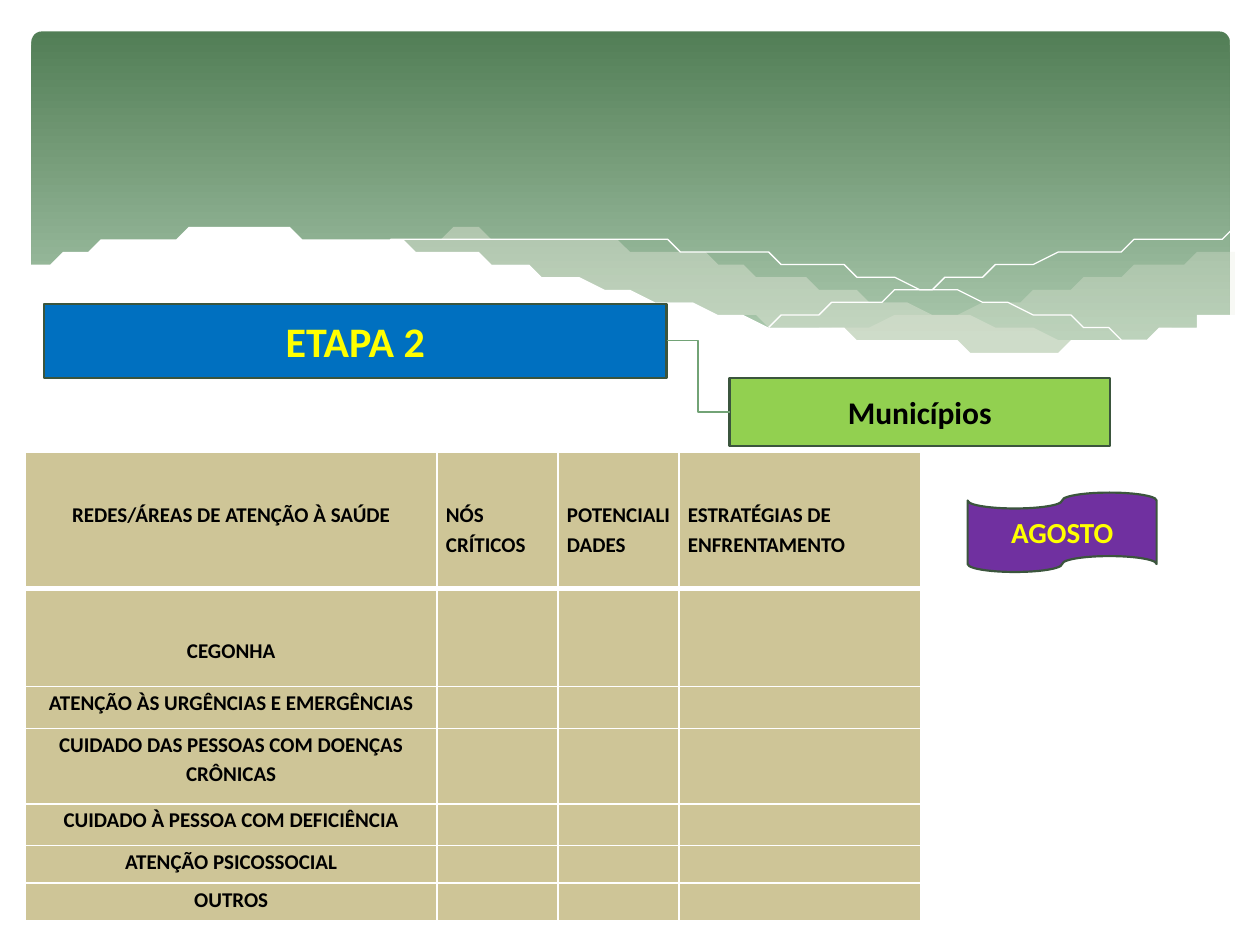
import pptx
import pptx.util
import pptx.dml.color
import pptx.enum.shapes
import pptx.enum.text
import pptx.oxml
import lxml.etree

SHAPE = pptx.enum.shapes.MSO_SHAPE
ALIGN = pptx.enum.text.PP_ALIGN
Pt = pptx.util.Pt
rgb = pptx.dml.color.RGBColor.from_string

prs = pptx.Presentation()
prs.slide_width = pptx.util.Inches(10)
prs.slide_height = pptx.util.Inches(7.5)
s = prs.slides.add_slide(prs.slide_layouts[6])

# Grid of 100 columns by 75 rows of square units
U = prs.slide_width // 100


def smooth(knots, steps=6):
    """Points of a Catmull-Rom curve through the knots."""
    ends = [knots[0]] + knots + [knots[-1]]
    pts = [knots[0]]
    for a, b, c, d in zip(ends, ends[1:], ends[2:], ends[3:]):
        for i in range(1, steps + 1):
            t = i / steps
            pts.append(tuple(
                (2 * q + (r - p) * t + (2 * p - 5 * q + 4 * r - w) * t ** 2
                 + (3 * q - p - 3 * r + w) * t ** 3) / 2
                for p, q, r, w in zip(a, b, c, d)))
    return pts


def style(sp, fill, line=None, width=1.25, text="", size=18, color="000000"):
    """Fill, outline and centred bold text of a shape."""
    sp.shadow.inherit = False
    if fill:
        sp.fill.solid()
        sp.fill.fore_color.rgb = rgb(fill)
    else:
        sp.fill.background()
    if line:
        sp.line.color.rgb = rgb(line)
        sp.line.width = Pt(width)
    else:
        sp.line.fill.background()
    if text:
        tf = sp.text_frame
        tf.text = text
        tf.word_wrap = True
        tf.vertical_anchor = pptx.enum.text.MSO_ANCHOR.MIDDLE
        p = tf.paragraphs[0]
        p.alignment = ALIGN.CENTER
        f = p.runs[0].font
        f.name, f.size, f.bold = "Calibri", Pt(size), True
        f.color.rgb = rgb(color)


# Green banner
sp = s.shapes.add_shape(SHAPE.ROUNDED_RECTANGLE, 2.5 * U, 2.5 * U, 95.1 * U, 27 * U)
sp.adjustments[0] = 0.03
style(sp, "527E56")
sp.fill.gradient()
sp.fill.gradient_angle = 270
for stop, (pos, color) in zip(sp.fill.gradient_stops, [(0, "527E56"), (0.9, "AAC8AD")]):
    stop.position = pos
    stop.color.rgb = rgb(color)

# Waves: upper edge, lower edge, fill, opacity in percent, line
waves = [
    ([(97.6, 20), (92.1, 21), (86.1, 22.3), (77.9, 24.2), (66.1, 26.5)],
     [(66.1, 26.5), (71.9, 27.2), (76.9, 27.7), (81.4, 27.7), (86.3, 27.5),
      (91.3, 26.7), (94.9, 25.7), (97.6, 24.7)], "EAEBDE", 29, None),
    ([(89.3, 27.3), (80.7, 26), (70.6, 24), (62.9, 22.2), (55.5, 20.5),
      (48.9, 19.4), (42, 18.7), (36.1, 18.5), (28.6, 19.1)],
     [(28.6, 19.1), (36.2, 20.3), (44.9, 22.2), (56.6, 24.8), (65, 26.4),
      (72.2, 27.4), (78.5, 27.8), (83.8, 27.8), (89.3, 27.3)], "EAEBDE", 40, None),
    ([(30.9, 19.5), (35.3, 18.9), (41.6, 18.7), (48.9, 19), (55.6, 19.7),
      (63.6, 20.8), (72.7, 22.6), (83.1, 25.1), (90.7, 27.2)], [], None, 100, "FFFFFF"),
    ([(61.3, 25.7), (69.5, 23.5), (77.6, 21.6), (86.6, 19.9), (92.4, 19),
      (97.5, 18.5)], [], None, 100, "FFFFFF"),
    ([(97.7, 24.6), (94, 25.9), (89.9, 26.9), (85, 27.5), (80.9, 27.7),
      (74.4, 27.4), (66.8, 26.5), (57.9, 25), (50.3, 23.3), (41.8, 21.3),
      (34, 19.7), (27.1, 18.8), (21.1, 18.4), (16.1, 18.4), (11.9, 18.7),
      (8.5, 19.3), (5.2, 20.1), (2.3, 21.3)],
     [(2.3, 32.9), (97.7, 32.9)], "FFFFFF", 100, None),
]
for upper, lower, fill, opacity, line in waves:
    pts = smooth(upper) + (smooth(lower) if len(lower) > 2 else lower)
    fb = s.shapes.build_freeform(*pts[0], scale=U)
    fb.add_line_segments(pts[1:], close=bool(lower))
    sp = fb.convert_to_shape()
    style(sp, fill, line, 0)
    if opacity < 100:
        clr = sp.fill._xPr.find(".//" + pptx.oxml.ns.qn("a:srgbClr"))
        lxml.etree.SubElement(clr, pptx.oxml.ns.qn("a:alpha"), val=str(opacity * 1000))

# Month tape
sp = s.shapes.add_shape(SHAPE.WAVE, 76.8 * U, 39.1 * U, 15 * U, 6.3 * U)
sp._element.spPr.prstGeom.set("prst", "flowChartPunchedTape")
av = sp._element.spPr.prstGeom.avLst
for gd in list(av):
    av.remove(gd)
style(sp, "7030A0", "3B553D", text="AGOSTO", size=16.6, color="FFFF00")

# Table of care networks
cols = [32.7, 9.6, 9.6, 19.2]
rows = [10.8, 7.8, 3.3, 6, 3.3, 3, 3]
header = ["REDES/ÁREAS DE ATENÇÃO À SAÚDE", "NÓS CRÍTICOS", "POTENCIALIDADES",
          "ESTRATÉGIAS DE ENFRENTAMENTO"]
networks = ["CEGONHA", "ATENÇÃO ÀS URGÊNCIAS E EMERGÊNCIAS",
            "CUIDADO DAS PESSOAS COM DOENÇAS CRÔNICAS",
            "CUIDADO À PESSOA COM DEFICIÊNCIA", "ATENÇÃO PSICOSSOCIAL", "OUTROS"]
data = [header] + [[n, "", "", ""] for n in networks]
table = s.shapes.add_table(len(rows), len(cols), 2 * U, 35.9 * U,
                           int(sum(cols) * U), int(sum(rows) * U)).table
for col, w in zip(table.columns, cols):
    col.width = int(w * U)
for i, h in enumerate(rows):
    table.rows[i].height = int(h * U)
    for j, text in enumerate(data[i]):
        cell = table.cell(i, j)
        cell.margin_left = cell.margin_right = int(0.7 * U)
        cell.margin_top = int(3.7 * U) if i < 2 and text else 0
        cell.margin_bottom = 0
        # White borders, thicker under the header
        tcPr = cell._tc.get_or_add_tcPr()
        for side in "LRTB":
            thick = (i, side) in [(0, "B"), (1, "T")]
            tcPr.append(pptx.oxml.parse_xml(
                f'<a:ln{side} {pptx.oxml.ns.nsdecls("a")} w="{Pt(3 if thick else 1)}">'
                '<a:solidFill><a:srgbClr val="FFFFFF"/></a:solidFill>'
                f'</a:ln{side}>'))
        cell.fill.solid()
        cell.fill.fore_color.rgb = rgb("CEC597")
        p = cell.text_frame.paragraphs[0]
        if not text:
            lxml.etree.SubElement(p._p, pptx.oxml.ns.qn("a:endParaRPr"), sz="1200")
            continue
        p.text = text
        p.alignment = ALIGN.LEFT if j else ALIGN.CENTER
        p.line_spacing = 1.15
        p.space_after = Pt(10)
        f = p.runs[0].font
        f.name, f.size, f.bold = "Calibri", Pt(12), True
        f.color.rgb = rgb("000000")

# Stage and municipality boxes
boxes = [
    (3.5, 24.1, 49.4, 5.9, "0070C0", "ETAPA 2", 24, "FFFF00"),
    (57.9, 30, 30.2, 5.4, "92D050", "Municípios", 18, "000000"),
]
ends = []
for x, y, w, h, fill, text, size, color in boxes:
    sp = s.shapes.add_shape(SHAPE.RECTANGLE, *(int(v * U) for v in (x, y, w, h)))
    style(sp, fill, "3B553D", text=text, size=size, color=color)
    ends.append(sp)

# Elbow from the stage's right side to the municipality's left side
cx = s.shapes.add_connector(pptx.enum.shapes.MSO_CONNECTOR.ELBOW, 0, 0, U, U)
cx.begin_connect(ends[0], 3)
cx.end_connect(ends[1], 1)
cx.line.color.rgb = rgb("72A376")
cx.line.width = Pt(0.75)
lxml.etree.SubElement(cx._element.spPr, pptx.oxml.ns.qn("a:effectLst"))

prs.save("out.pptx")
